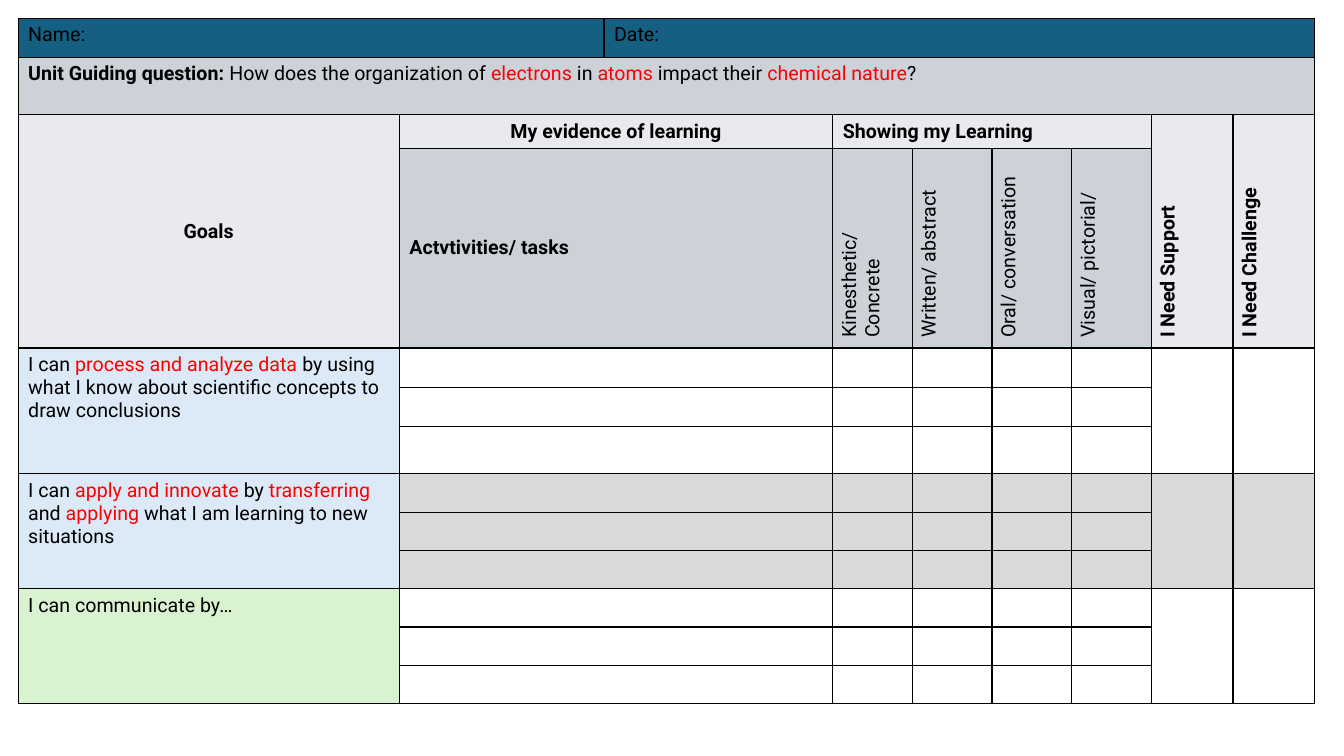
from lxml.etree import SubElement
from pptx import Presentation
from pptx.dml.color import RGBColor
from pptx.enum.text import MSO_ANCHOR, PP_ALIGN
from pptx.oxml import parse_xml
from pptx.oxml.ns import nsdecls, qn
from pptx.util import Inches, Pt

BLACK = RGBColor(0x00, 0x00, 0x00)
RED = RGBColor(0xFF, 0x00, 0x00)
WHITE = RGBColor(0xFF, 0xFF, 0xFF)
TEAL = RGBColor(0x15, 0x60, 0x82)
SLATE = RGBColor(0xCC, 0xD2, 0xD8)
MIST = RGBColor(0xE8, 0xEA, 0xED)
GREY = RGBColor(0xD9, 0xD9, 0xD9)
BLUE = RGBColor(0xDC, 0xEA, 0xF7)
GREEN = RGBColor(0xD9, 0xF2, 0xD0)

FONT = "Roboto"
SIZE = 14
LEFT, TOP = 0.18, 0.18
COLUMNS = [3.78, 2.03, 2.27, 0.79, 0.79, 0.79, 0.79, 0.81, 0.81]
ROWS = [0.39, 0.57, 0.33, 1.98, 0.39, 0.39, 0.47] + [0.38] * 6
FIRST_GOAL_ROW = 4
TASKS_PER_GOAL = 3

# row, column, row span, column span, fill, runs, options
HEADINGS = [
    (0, 0, 1, 2, TEAL, [("Name:", "")], ""),
    (0, 2, 1, 7, TEAL, [("Date:", "")], ""),
    (1, 0, 1, 9, SLATE, [
        ("Unit Guiding question: ", "bold"),
        ("How does the organization of ", ""), ("electrons", "red"),
        (" in ", ""), ("atoms", "red"), (" impact their ", ""),
        ("chemical nature", "red"), ("?", "")], ""),
    (2, 0, 2, 1, MIST, [("Goals", "bold")], "middle center"),
    (2, 1, 1, 2, MIST, [("My evidence of learning", "bold")], "middle center"),
    (2, 3, 1, 4, MIST, [("Showing my Learning", "bold")], "middle"),
    (2, 7, 2, 1, MIST, [("I Need Support", "bold")], "middle upright"),
    (2, 8, 2, 1, MIST, [("I Need Challenge", "bold")], "middle upright"),
    (3, 1, 1, 2, SLATE, [("Actvtivities/ tasks", "bold")], "middle"),
    (3, 3, 1, 1, SLATE, [("Kinesthetic/ Concrete", "")], "middle upright"),
    (3, 4, 1, 1, SLATE, [("Written/ abstract", "")], "middle upright"),
    (3, 5, 1, 1, SLATE, [("Oral/ conversation", "")], "middle upright"),
    (3, 6, 1, 1, SLATE, [("Visual/ pictorial/", "")], "middle upright"),
]

GOALS = [
    (BLUE, WHITE, [
        ("I can ", ""), ("process and analyze data", "red"),
        (" by using what I know about scientific concepts to draw conclusions", "")]),
    (BLUE, GREY, [
        ("I can ", ""), ("apply and innovate ", "red"), ("by ", ""),
        ("transferring", "red"), (" and", ""), (" applying ", "red"),
        ("what I am learning to new situations", "")]),
    (GREEN, WHITE, [("I can communicate by…", "")]),
]


def prepare_cell(cell):
    properties = cell._tc.get_or_add_tcPr()
    for side in ("lnL", "lnR", "lnT", "lnB"):
        properties.append(parse_xml(
            f'<a:{side} {nsdecls("a")} w="{Pt(1)}"><a:solidFill>'
            f'<a:srgbClr val="{BLACK}"/></a:solidFill></a:{side}>'))
    paragraph = cell.text_frame.paragraphs[0]
    paragraph.font.name = FONT
    paragraph.font.size = Pt(SIZE)
    SubElement(paragraph._p, qn("a:endParaRPr")).set("sz", str(SIZE * 100))


def fill_block(table, row, column, height, width, color, runs=(), options=""):
    cell = table.cell(row, column)
    if height * width > 1:
        cell.merge(table.cell(row + height - 1, column + width - 1))
    cell.fill.solid()
    cell.fill.fore_color.rgb = color
    if "middle" in options:
        cell.vertical_anchor = MSO_ANCHOR.MIDDLE
    if "upright" in options:
        cell._tc.get_or_add_tcPr().set("vert", "vert270")
    paragraph = cell.text_frame.paragraphs[0]
    if "center" in options:
        paragraph.alignment = PP_ALIGN.CENTER
    for text, style in runs:
        run = paragraph.add_run()
        run.text = text
        run.font.bold = style == "bold"
        run.font.color.rgb = RED if style == "red" else BLACK


presentation = Presentation()
presentation.slide_width = Inches(13.33)
presentation.slide_height = Inches(7.5)
slide = presentation.slides.add_slide(presentation.slide_layouts[6])

table = slide.shapes.add_table(
    len(ROWS), len(COLUMNS), Inches(LEFT), Inches(TOP),
    Inches(sum(COLUMNS)), Inches(sum(ROWS))).table
table.first_row = False
table.horz_banding = False
for column, width in zip(table.columns, COLUMNS):
    column.width = Inches(width)
for row, height in zip(table.rows, ROWS):
    row.height = Inches(height)
for cell in table.iter_cells():
    prepare_cell(cell)

for heading in HEADINGS:
    fill_block(table, *heading)

for index, (goal_color, task_color, runs) in enumerate(GOALS):
    first = FIRST_GOAL_ROW + index * TASKS_PER_GOAL
    fill_block(table, first, 0, TASKS_PER_GOAL, 1, goal_color, runs)
    for column in (7, 8):
        fill_block(table, first, column, TASKS_PER_GOAL, 1, task_color)
    for row in range(first, first + TASKS_PER_GOAL):
        fill_block(table, row, 1, 1, 2, task_color)
        for column in range(3, 7):
            fill_block(table, row, column, 1, 1, task_color)

presentation.save("out.pptx")
